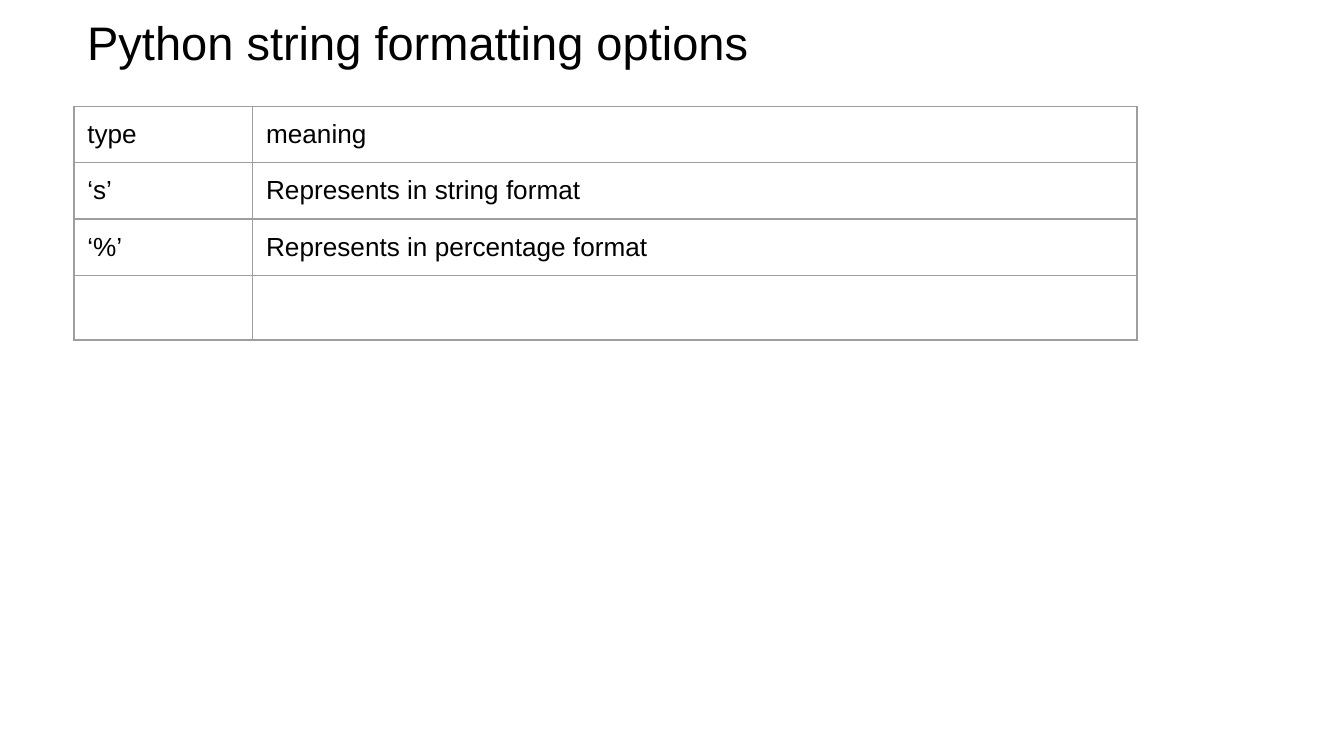
"""Build a slide with a table of Python string formatting options."""
import pptx
import pptx.dml.color
import pptx.enum.text
import pptx.oxml
import pptx.oxml.ns
import pptx.util
from pptx.util import Inches

TITLE = "Python string formatting options"
ROWS = [
    ("type", "meaning"),
    ("‘s’", "Represents in string format"),
    ("‘%’", "Represents in percentage format"),
    ("", ""),
]
COLORS = {"text": "000000", "border": "9E9E9E"}
COL_WIDTHS = [1.33, 6.58]
ROW_HEIGHTS = [0.42, 0.42, 0.42, 0.48]
LEFT, TABLE_TOP = 0.55, 0.79
MARGINS = {f"margin_{side}": Inches(0.1) for side in ("left", "right", "top", "bottom")}
CELL_MARGINS = {**MARGINS, "margin_bottom": Inches(0.08)}


def set_attrs(obj, values):
    for name, value in values.items():
        setattr(obj, name, value)


def write(tf, text, size):
    r = tf.paragraphs[0].add_run()
    r.text = text
    set_attrs(r.font, {"name": "Arial", "size": pptx.util.Pt(size), "bold": False})
    r.font.color.rgb = pptx.dml.color.RGBColor.from_string(COLORS["text"])


def add_borders(cell):
    tc_pr = cell._tc.get_or_add_tcPr()
    for i, side in enumerate(("lnL", "lnR", "lnT", "lnB")):
        tc_pr.insert(i, pptx.oxml.parse_xml(
            f'<a:{side} {pptx.oxml.ns.nsdecls("a")} w="{pptx.util.Pt(0.75)}"><a:solidFill>'
            f'<a:srgbClr val="{COLORS["border"]}"/></a:solidFill></a:{side}>'))


def add_title(s):
    tf = s.shapes.add_textbox(Inches(LEFT), 0, Inches(9.32), Inches(0.63)).text_frame
    set_attrs(tf, {"word_wrap": True,
                   "vertical_anchor": pptx.enum.text.MSO_ANCHOR.TOP, **MARGINS})
    write(tf, TITLE, 25.2)


def add_options_table(s):
    table = s.shapes.add_table(
        len(ROWS), len(COL_WIDTHS), Inches(LEFT), Inches(TABLE_TOP),
        Inches(sum(COL_WIDTHS)), Inches(sum(ROW_HEIGHTS))).table
    set_attrs(table, {"first_row": False, "horz_banding": False})
    for col, width in zip(table.columns, COL_WIDTHS):
        col.width = Inches(width)
    for row, height, texts in zip(table.rows, ROW_HEIGHTS, ROWS):
        row.height = Inches(height)
        for cell, text in zip(row.cells, texts):
            cell.fill.background()
            add_borders(cell)
            if text:
                set_attrs(cell, CELL_MARGINS)
                write(cell.text_frame, text, 14)


def main():
    prs = pptx.Presentation()
    set_attrs(prs, {"slide_width": Inches(10), "slide_height": Inches(10 * 9 / 16)})
    s = prs.slides.add_slide(prs.slide_layouts[6])
    add_title(s)
    add_options_table(s)
    prs.save("out.pptx")


if __name__ == "__main__":
    main()
